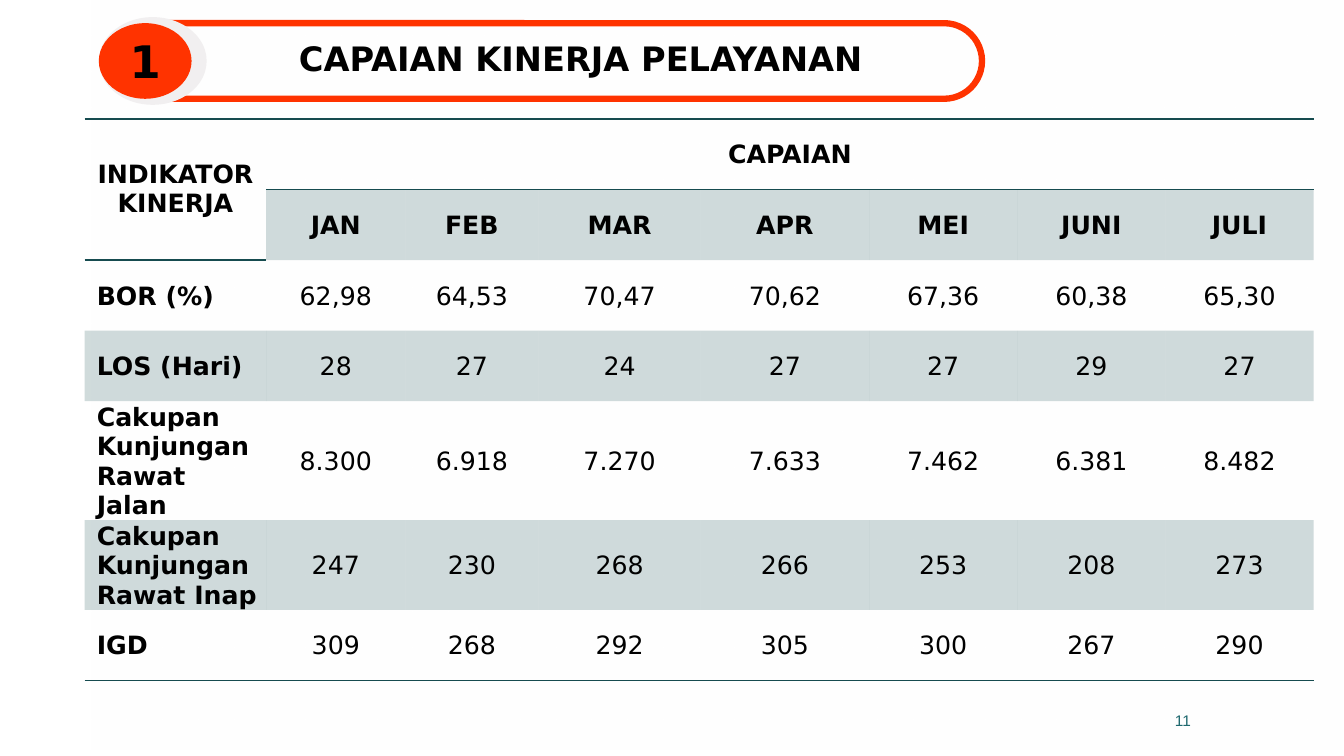
import dataclasses
import typing

import pptx
import pptx.dml.color
import pptx.enum.shapes
import pptx.enum.text
import pptx.oxml
import pptx.oxml.ns
import pptx.util

PX = 9144  # EMU in one px, 100 px to the inch
COLORS = {"white": "FFFFFF", "black": "000000", "teal": "164B4F",
          "page": "1F696F", "red": "FF3300", "halo": "F1EFF0"}
KIND = pptx.enum.shapes.MSO_SHAPE
ALIGN = pptx.enum.text.PP_ALIGN
ANCHOR = pptx.enum.text.MSO_ANCHOR
NO_GRID = "{2D5ABB26-0587-4C30-8999-92F81FD0307C}"

COLS = [180, 138, 132, 161, 167, 147, 147, 147]
ROWS = [70, 70, 70, 70, 74, 74, 70]
GRID = [
    ["INDIKATOR KINERJA", "CAPAIAN", "", "", "", "", "", ""],
    ["", "JAN", "FEB", "MAR", "APR", "MEI", "JUNI", "JULI"],
    ["BOR (%)", "62,98", "64,53", "70,47", "70,62", "67,36", "60,38", "65,30"],
    ["LOS (Hari)", "28", "27", "24", "27", "27", "29", "27"],
    ["Cakupan Kunjungan Rawat Jalan",
     "8.300", "6.918", "7.270", "7.633", "7.462", "6.381", "8.482"],
    ["Cakupan Kunjungan Rawat Inap",
     "247", "230", "268", "266", "253", "208", "273"],
    ["IGD", "309", "268", "292", "305", "300", "267", "290"],
]


@dataclasses.dataclass(frozen=True)
class Box:
    left: int
    top: int
    width: int
    height: int

    def emu(self) -> list[int]:
        return [n * PX for n in dataclasses.astuple(self)]


@dataclasses.dataclass(frozen=True)
class Style:
    size: int
    bold: bool = True
    color: str = "black"
    name: str = "DejaVu Sans"
    align: typing.Any = ALIGN.CENTER
    anchor: typing.Any = ANCHOR.MIDDLE


@dataclasses.dataclass(frozen=True)
class Part:
    """One piece of the title badge."""
    kind: typing.Any
    box: Box
    fill: str = ""
    line: str = ""
    text: str = ""


BADGE = [
    Part(KIND.ROUNDED_RECTANGLE, Box(110, 23, 864, 75), line="red"),
    Part(KIND.OVAL, Box(98, 17, 107, 87), fill="halo"),
    Part(KIND.OVAL, Box(98, 23, 92, 75), fill="red", text="1"),
]


def rgb(name: str) -> pptx.dml.color.RGBColor:
    return pptx.dml.color.RGBColor.from_string(COLORS[name])


def fade(clr, share: int) -> None:
    """Set the opacity, in percent, of a colour element."""
    alpha = pptx.oxml.parse_xml(
        f'<a:alpha {pptx.oxml.ns.nsdecls("a")} val="{share * 1000}"/>')
    clr.append(alpha)


def write(frame, text: str, style: Style):
    frame.word_wrap = True
    frame.vertical_anchor = style.anchor
    para = frame.paragraphs[0]
    para.alignment = style.align
    run = para.add_run()
    run.text = text
    look = {"name": style.name, "size": pptx.util.Pt(style.size),
            "bold": style.bold}
    for key, value in look.items():
        setattr(run.font, key, value)
    run.font.color.rgb = rgb(style.color)
    return para


def add_panel(slide) -> None:
    panel = slide.shapes.add_shape(KIND.RECTANGLE, *Box(91, 0, 1241, 750).emu())
    panel.shadow.inherit = False
    panel.line.fill.background()
    panel.fill.gradient()
    panel.fill.gradient_angle = 270
    for stop in panel.fill.gradient_stops:
        stop.color.rgb = rgb("white")
    tints = panel._element.spPr.iter(pptx.oxml.ns.qn("a:srgbClr"))
    for clr, share in zip(tints, (60, 0)):
        fade(clr, share)


def add_part(group, part: Part) -> None:
    shape = group.shapes.add_shape(part.kind, *part.box.emu())
    shape.shadow.inherit = False
    if part.fill:
        shape.fill.solid()
        shape.fill.fore_color.rgb = rgb(part.fill)
    else:
        shape.fill.background()
    if part.line:
        shape.adjustments[0] = 0.5
        shape.line.color.rgb = rgb(part.line)
        shape.line.width = pptx.util.Pt(4.5)
    else:
        shape.line.fill.background()
    if part.text:
        write(shape.text_frame, part.text, Style(32))


def rule(cell, sides: str) -> None:
    """Draw thin teal borders on the given sides, T or B."""
    for side in sorted(sides):
        line = pptx.oxml.parse_xml(
            f'<a:ln{side} {pptx.oxml.ns.nsdecls("a")} w="12700"><a:solidFill>'
            f'<a:srgbClr val="{COLORS["teal"]}"/></a:solidFill></a:ln{side}>')
        cell._tc.get_or_add_tcPr().insert(0, line)


def fill_cell(cell, row: int, col: int) -> None:
    inset = 0 if row + col == 0 else 2 * PX
    sizes = {"margin_left": inset, "margin_right": inset,
             "margin_top": inset, "margin_bottom": 0,
             "vertical_anchor": ANCHOR.MIDDLE}
    for key, value in sizes.items():
        setattr(cell, key, value)
    if row % 2 and (row > 1 or col):
        cell.fill.solid()
        cell.fill.fore_color.rgb = rgb("teal")
        fade(cell._tc.tcPr.find(".//" + pptx.oxml.ns.qn("a:srgbClr")), 20)
    else:
        cell.fill.background()
    if row == 0:
        rule(cell, "TB")
    elif row == len(ROWS) - 1 or (row, col) == (1, 0):
        rule(cell, "B")
    if GRID[row][col]:
        label = row > 1 and col == 0
        align = ALIGN.LEFT if label else ALIGN.CENTER
        para = write(cell.text_frame, GRID[row][col],
                     Style(18, bold=row < 2 or col == 0, align=align))
        if label:
            para._p.get_or_add_pPr().set("marL", str(10 * PX))


def add_grid(slide) -> None:
    frame = slide.shapes.add_table(len(ROWS), len(COLS),
                                   *Box(84, 118, 1219, 564).emu())
    table = frame.table
    table.first_row = table.horz_banding = False
    mark = pptx.oxml.ns.qn("a:tableStyleId")
    table._tbl.tblPr.find(mark).text = NO_GRID
    for col, width in zip(table.columns, COLS):
        col.width = width * PX
    for row, height in zip(table.rows, ROWS):
        row.height = height * PX
    table.cell(0, 0).merge(table.cell(1, 0))
    table.cell(0, 1).merge(table.cell(0, len(COLS) - 1))
    for row in range(len(ROWS)):
        for col in range(len(COLS)):
            fill_cell(table.cell(row, col), row, col)


def set_title(slide) -> None:
    title = slide.shapes.title
    place = zip(("left", "top", "width", "height"), Box(146, 8, 860, 75).emu())
    for key, value in place:
        setattr(title, key, value)
    title.text_frame.auto_size = pptx.enum.text.MSO_AUTO_SIZE.NONE
    para = write(title.text_frame, "CAPAIAN KINERJA PELAYANAN",
                 Style(24, anchor=ANCHOR.BOTTOM))
    para.line_spacing = 0.9
    slide.shapes._spTree.append(title._element)


def main() -> None:
    deck = pptx.Presentation()
    deck.slide_width, deck.slide_height = 1333 * PX, 750 * PX
    slide = deck.slides.add_slide(deck.slide_layouts[5])
    add_panel(slide)
    add_grid(slide)
    page = slide.shapes.add_textbox(*Box(880, 695, 311, 40).emu())
    write(page.text_frame, "11",
          Style(11, False, "page", "Arial", ALIGN.RIGHT))
    badge = slide.shapes.add_group_shape()
    for part in BADGE:
        add_part(badge, part)
    set_title(slide)
    deck.save("out.pptx")


if __name__ == "__main__":
    main()
